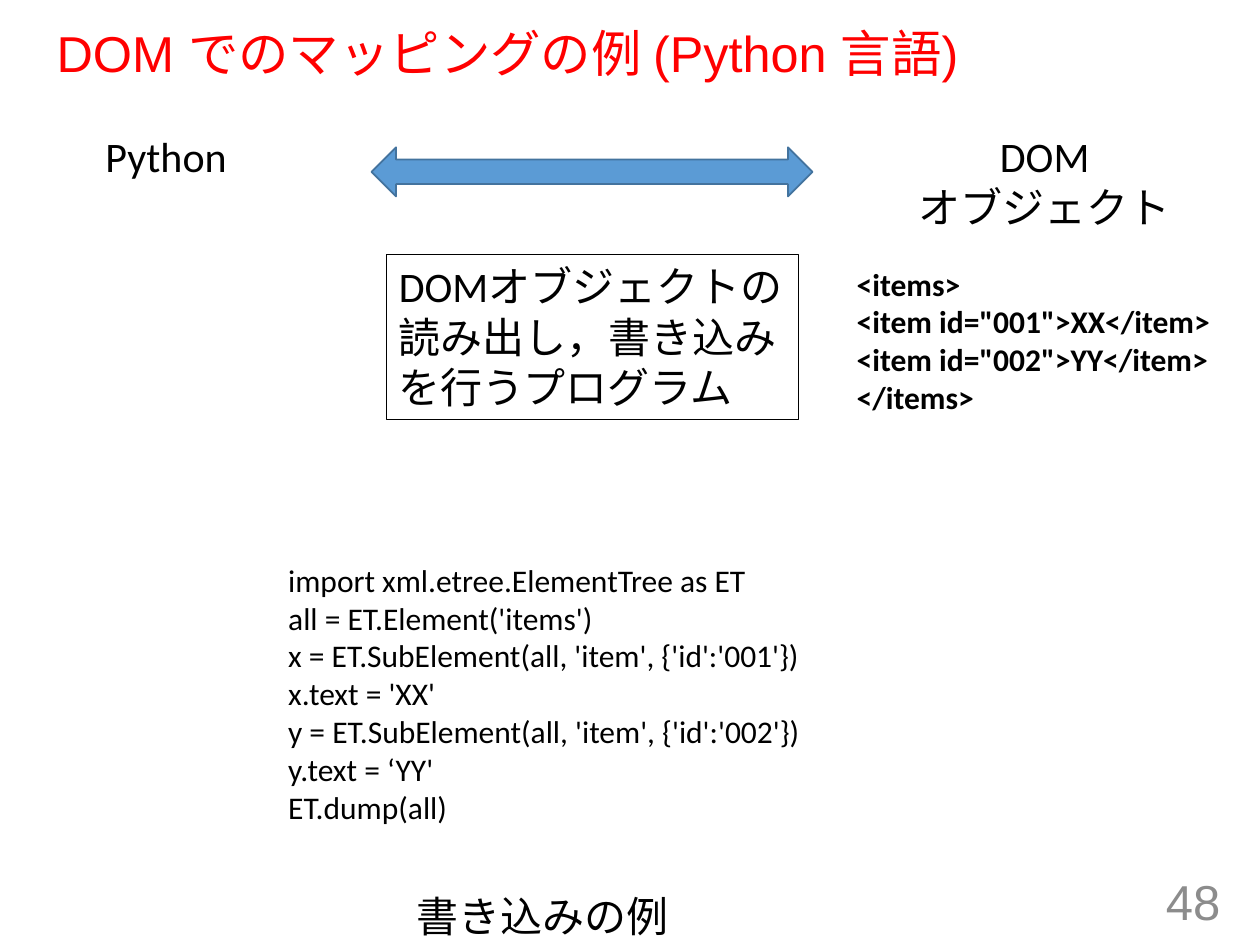
from pptx import Presentation
from pptx.dml.color import RGBColor
from pptx.enum.shapes import MSO_SHAPE as Shape
from pptx.enum.text import MSO_ANCHOR as Anchor, PP_ALIGN as Align
from pptx.util import Cm, Pt

XML = """<items>
<item id="001">XX</item>
<item id="002">YY</item>
</items>"""

CODE = """import xml.etree.ElementTree as ET
all = ET.Element('items')
x = ET.SubElement(all, 'item', {'id':'001'})
x.text = 'XX'
y = ET.SubElement(all, 'item', {'id':'002'})
y.text = ‘YY'
ET.dump(all)"""


def color(code):
    return RGBColor.from_string(code)


def write(slide, text, box, size=24, font="Calibri", ink="000000", bold=False,
          align=Align.LEFT, anchor=Anchor.TOP, lead=1.0, edge=None):
    """Place a text box, one paragraph per line of text."""
    shape = slide.shapes.add_textbox(*map(Cm, box))
    if edge:
        shape.line.color.rgb = color(edge)
        shape.line.width = Pt(0.75)
    frame = shape.text_frame
    frame.word_wrap = True
    frame.vertical_anchor = anchor
    frame.text = text
    for para in frame.paragraphs:
        para.alignment = align
        para.line_spacing = lead
        para.font.size = Pt(size)
        para.font.name = font
        para.font.bold = bold
        para.font.color.rgb = color(ink)


def add_title(slide, box):
    write(slide, "DOM でのマッピングの例 (Python 言語)", box, size=28.8,
          font="Arial", ink="FF0000", anchor=Anchor.MIDDLE, lead=0.9)


def add_map(slide, box):
    """Python on the left, DOM on the right, the program between."""
    x, y, wide, _ = box
    side = 6.4
    # Headings at both ends
    write(slide, "Python", (x, y, side, 1.27), align=Align.CENTER)
    write(slide, "DOM\nオブジェクト", (x + wide - side, y, side, 2.31),
          align=Align.CENTER)

    # Two-way arrow
    arrow = slide.shapes.add_shape(Shape.LEFT_RIGHT_ARROW, Cm(x + 7.34),
                                   Cm(y + 0.46), Cm(8.89), Cm(0.99))
    arrow.shadow.inherit = False
    arrow.fill.solid()
    arrow.fill.fore_color.rgb = color("5B9BD5")
    arrow.line.color.rgb = color("43739E")
    arrow.line.width = Pt(1)

    # Program and the XML it handles
    write(slide, "DOMオブジェクトの読み出し，書き込みを行うプログラム",
          (x + 7.64, y + 2.62, 8.31, 3.33), edge="000000")
    write(slide, XML, (x + 16.87, y + 2.7, 8.05, 3.33), size=18, bold=True)


def add_code(slide, box):
    """Sample code with its caption underneath."""
    x, y, wide, high = box
    write(slide, CODE, (x, y, wide, 5.64), size=18)
    write(slide, "書き込みの例", (x + 2.59, y + high - 1.27, 6.17, 1.27))


def add_page(slide, box):
    write(slide, "48", box, size=28, font="Arial", ink="8C8C8C",
          align=Align.RIGHT, anchor=Anchor.MIDDLE)


def main():
    deck = Presentation()
    deck.slide_width, deck.slide_height = Cm(25.4), Cm(19.05)
    slide = deck.slides.add_slide(deck.slide_layouts[6])
    add_title(slide, (0.89, 0.48, 23.5, 1.3))
    add_map(slide, (0.15, 2.51, 24.11, 6.03))
    add_code(slide, (5.56, 11.18, 12.7, 7.92))
    add_page(slide, (19.13, 17.65, 5.72, 1.02))
    deck.save("out.pptx")


if __name__ == "__main__":
    main()
